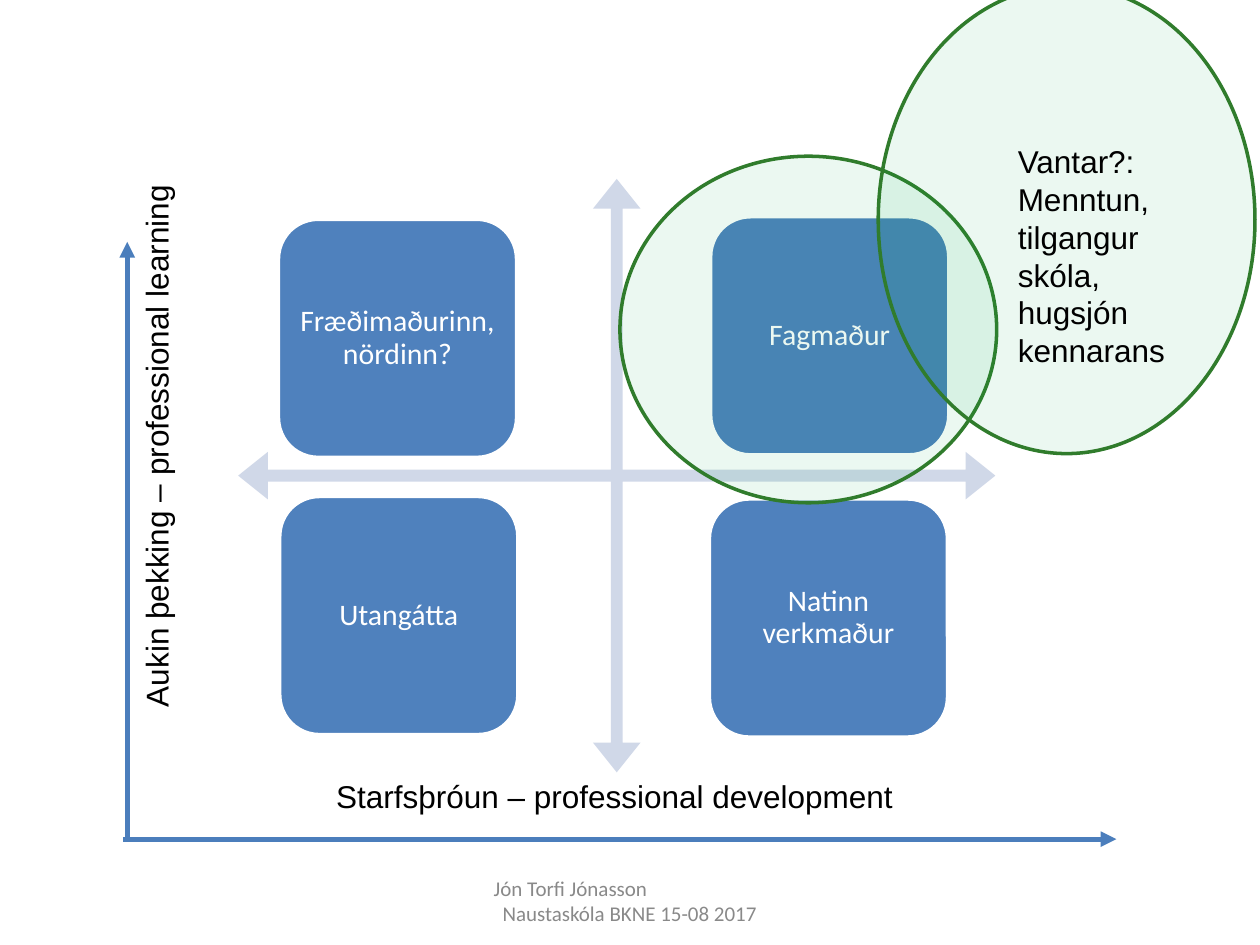
from dataclasses import dataclass

from lxml import etree
from pptx import Presentation
from pptx.dml.color import RGBColor
from pptx.enum.shapes import MSO_CONNECTOR, MSO_SHAPE
from pptx.enum.text import MSO_ANCHOR, MSO_AUTO_SIZE, PP_ALIGN
from pptx.oxml.ns import qn
from pptx.util import Pt

EMU_PER_PX = 9144  # 100 px to the inch
STRAIGHT = MSO_CONNECTOR.STRAIGHT
QUAD_ARROW = MSO_SHAPE.QUAD_ARROW
ROUNDED = MSO_SHAPE.ROUNDED_RECTANGLE
OVAL = MSO_SHAPE.OVAL
MIDDLE = MSO_ANCHOR.MIDDLE
GROW = MSO_AUTO_SIZE.SHAPE_TO_FIT_TEXT
CENTER = PP_ALIGN.CENTER


@dataclass(frozen=True)
class Theme:
    tile: str = "4F81BD"
    axis: str = "4B7EBC"
    cross: str = "D0D8E8"
    bubble: str = "00B050"
    bubble_line: str = "307C2C"
    bubble_opacity: int = 8
    white: str = "FFFFFF"
    black: str = "000000"
    footer: str = "898989"
    tile_font: str = "Calibri"
    label_font: str = "Arial"
    label_size: int = 18
    tile_size: int = 17
    footer_size: int = 12
    axis_width: int = 3
    outline_width: int = 2


@dataclass(frozen=True)
class Box:
    left: int
    top: int
    width: int
    height: int

    def emu(self) -> list[int]:
        return [px(n) for n in (self.left, self.top, self.width, self.height)]


@dataclass(frozen=True)
class Axis:
    start: tuple[int, int]
    end: tuple[int, int]


@dataclass(frozen=True)
class Tile:
    left: int
    top: int
    text: str


@dataclass(frozen=True)
class Label:
    box: Box
    text: str
    wrap: bool = True
    rotation: int = 0


THEME = Theme()
TILE_SIDE = 189
TILE_INSET = 7
FOOTER_BOX = Box(342, 695, 317, 40)
FOOTER_INDENT, FOOTER_HANGING = 47, 7
CROSS_BOX = Box(189, 142, 601, 471)
CROSS_PROPORTIONS = (0.02, 0.04, 0.05)

AXES = [
    Axis((98, 666), (886, 666)),
    Axis((101, 666), (101, 192)),
]
TILES = [
    Tile(221, 174, "Fræðimaðurinn, nördinn?"),
    Tile(564, 172, "Fagmaður"),
    Tile(222, 394, "Utangátta"),
    Tile(563, 396, "Natinn verkmaður"),
]
AXIS_LABELS = [
    Label(Box(257, 612, 466, 40), "Starfsþróun – professional development", wrap=False),
    Label(Box(-224, 203, 696, 40), "Aukin þekking – professional learning", rotation=270),
]
BUBBLES = [Box(492, 124, 299, 275), Box(697, -11, 299, 371)]
MISSING = Label(Box(798, 108, 140, 192),
                "Vantar?:\nMenntun, tilgangur skóla,\nhugsjón kennarans")


def px(length: int) -> int:
    return length * EMU_PER_PX


def color(value: str) -> RGBColor:
    return RGBColor.from_string(value)


def style_text(frame, font: str, size: int, value: str) -> None:
    for para in frame.paragraphs:
        for span in para.runs:
            span.font.name = font
            span.font.size = Pt(size)
            span.font.color.rgb = color(value)


def add_filled(page, kind, box: Box, fill: str, line: str | None = None):
    shape = page.shapes.add_shape(kind, *box.emu())
    shape.shadow.inherit = False
    shape.fill.solid()
    shape.fill.fore_color.rgb = color(fill)
    if line:
        shape.line.color.rgb = color(line)
        shape.line.width = Pt(THEME.outline_width)
    else:
        shape.line.fill.background()
    return shape


def add_footer(page) -> None:
    frame = page.shapes.add_textbox(*FOOTER_BOX.emu()).text_frame
    frame.word_wrap = True
    frame.vertical_anchor = MIDDLE
    frame.text = "Jón Torfi Jónasson\vNaustaskóla BKNE 15-08 2017"
    properties = frame.paragraphs[0]._p.get_or_add_pPr()
    properties.set("marL", str(px(FOOTER_INDENT)))
    properties.set("indent", str(px(-FOOTER_HANGING)))
    style_text(frame, THEME.tile_font, THEME.footer_size, THEME.footer)


def add_axis(page, axis: Axis) -> None:
    points = [px(n) for n in axis.start + axis.end]
    connector = page.shapes.add_connector(STRAIGHT, *points)
    connector.line.color.rgb = color(THEME.axis)
    connector.line.width = Pt(THEME.axis_width)
    etree.SubElement(connector.line._get_or_add_ln(), qn("a:tailEnd"), type="triangle")
    etree.SubElement(connector._element.spPr, qn("a:effectLst"))


def add_cross(page) -> None:
    cross = add_filled(page, QUAD_ARROW, CROSS_BOX, THEME.cross)
    for index, proportion in enumerate(CROSS_PROPORTIONS):
        cross.adjustments[index] = proportion


def add_tile(page, tile: Tile) -> None:
    box = Box(tile.left, tile.top, TILE_SIDE, TILE_SIDE)
    frame = add_filled(page, ROUNDED, box, THEME.tile, THEME.white).text_frame
    frame.word_wrap = True
    frame.vertical_anchor = MIDDLE
    frame.margin_left = frame.margin_right = px(TILE_INSET)
    frame.margin_top = frame.margin_bottom = px(TILE_INSET)
    frame.text = tile.text
    frame.paragraphs[0].alignment = CENTER
    frame.paragraphs[0].line_spacing = 0.9
    style_text(frame, THEME.tile_font, THEME.tile_size, THEME.white)


def add_label(page, label: Label) -> None:
    shape = page.shapes.add_textbox(*label.box.emu())
    shape.rotation = label.rotation
    frame = shape.text_frame
    frame.word_wrap = label.wrap
    frame.auto_size = GROW
    frame.text = label.text
    style_text(frame, THEME.label_font, THEME.label_size, THEME.black)


def add_bubble(page, box: Box) -> None:
    """Draw an outlined ellipse that lets what lies behind it show through."""
    bubble = add_filled(page, OVAL, box, THEME.bubble, THEME.bubble_line)
    fill_color = bubble._element.spPr.find(qn("a:solidFill"))[0]
    etree.SubElement(fill_color, qn("a:alpha"), val=str(THEME.bubble_opacity * 1000))


def main() -> None:
    deck = Presentation()
    deck.slide_width, deck.slide_height = px(1000), px(750)
    page = deck.slides.add_slide(deck.slide_layouts[6])
    add_footer(page)
    for axis in AXES:
        add_axis(page, axis)
    add_cross(page)
    for tile in TILES:
        add_tile(page, tile)
    for label in AXIS_LABELS:
        add_label(page, label)
    for box in BUBBLES:
        add_bubble(page, box)
    add_label(page, MISSING)
    deck.save("out.pptx")


if __name__ == "__main__":
    main()
